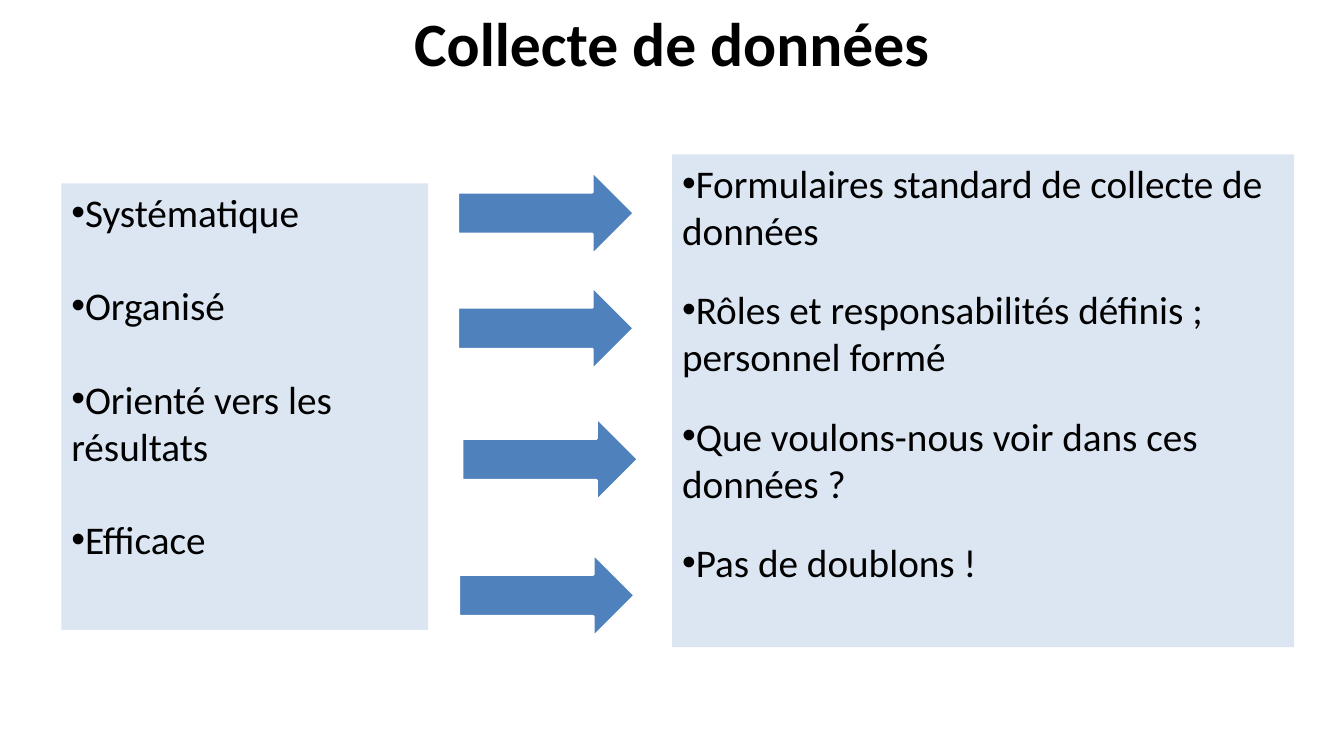
from pptx import Presentation
from pptx.dml.color import RGBColor as RGB
from pptx.enum.shapes import MSO_SHAPE as Kind
from pptx.enum.text import MSO_ANCHOR as Anchor, PP_ALIGN as Align
from pptx.oxml.ns import qn
from pptx.util import Pt
from lxml.etree import SubElement as Sub

FONT = "Calibri"
PALE = "DCE6F2"
BLUE = "4F81BD"

TRAITS = ["Systématique", "Organisé", "Orienté vers les résultats", "Efficace"]
STEPS = [
    "Formulaires standard de collecte de données",
    "Rôles et responsabilités définis ; personnel formé",
    "Que voulons-nous voir dans ces données ?",
    "Pas de doublons !",
]
ARROWS = [(327, 122.4), (327, 204.6), (330, 298.2), (327.6, 395.4)]


def paint(fmt, color):
    fmt.solid()
    fmt.fore_color.rgb = RGB.from_string(color)


def write(para, text, size=28, bold=False, align=Align.LEFT, gap=0, bullet=False):
    props = para._p.get_or_add_pPr()
    if bullet:
        props.set("marL", "0")
        props.set("indent", "0")
        Sub(props, qn("a:buFont"), typeface="Arial")
        Sub(props, qn("a:buChar"), char="•")
    para.alignment = align
    para.space_before = Pt(gap)
    run = para.add_run()
    run.text = text
    font = run.font
    font.name, font.size, font.bold = FONT, Pt(size), bold
    font.color.rgb = RGB.from_string("000000")


def shape(slide, kind, left, top, width, height, fill):
    item = slide.shapes.add_shape(kind, Pt(left), Pt(top), Pt(width), Pt(height))
    item.shadow.inherit = False
    paint(item.fill, fill)
    return item


def panel(slide, left, top, width, height, lines, gap):
    box = shape(slide, Kind.RECTANGLE, left, top, width, height, PALE)
    box.line.fill.background()
    frame = box.text_frame
    frame.word_wrap = True
    frame.vertical_anchor = Anchor.TOP
    for i, line in enumerate(lines):
        para = frame.add_paragraph() if i else frame.paragraphs[0]
        write(para, line, gap=gap if i else 0, bullet=True)


def arrow(slide, left, top):
    item = shape(slide, Kind.RIGHT_ARROW, left, top, 126, 59.8, BLUE)
    paint(item.line.fill, "FFFFFF")
    item.line.width = Pt(2)


def head(slide, text):
    title = slide.shapes.title
    title.left, title.top = Pt(156), Pt(0)
    title.width, title.height = Pt(648), Pt(90)
    title.text_frame.vertical_anchor = Anchor.TOP
    write(title.text_frame.paragraphs[0], text, size=44, bold=True, align=Align.CENTER)


def main():
    deck = Presentation()
    deck.slide_width, deck.slide_height = Pt(960), Pt(540)
    slide = deck.slides.add_slide(deck.slide_layouts[5])
    head(slide, "Collecte de données")

    # Traits on the left, steps on the right
    panel(slide, 43.9, 131, 262, 319, TRAITS, gap=33)
    panel(slide, 480.2, 110.2, 444.2, 352, STEPS, gap=23)

    # Arrows between the panels
    for left, top in ARROWS:
        arrow(slide, left, top)

    deck.save("out.pptx")


if __name__ == "__main__":
    main()
